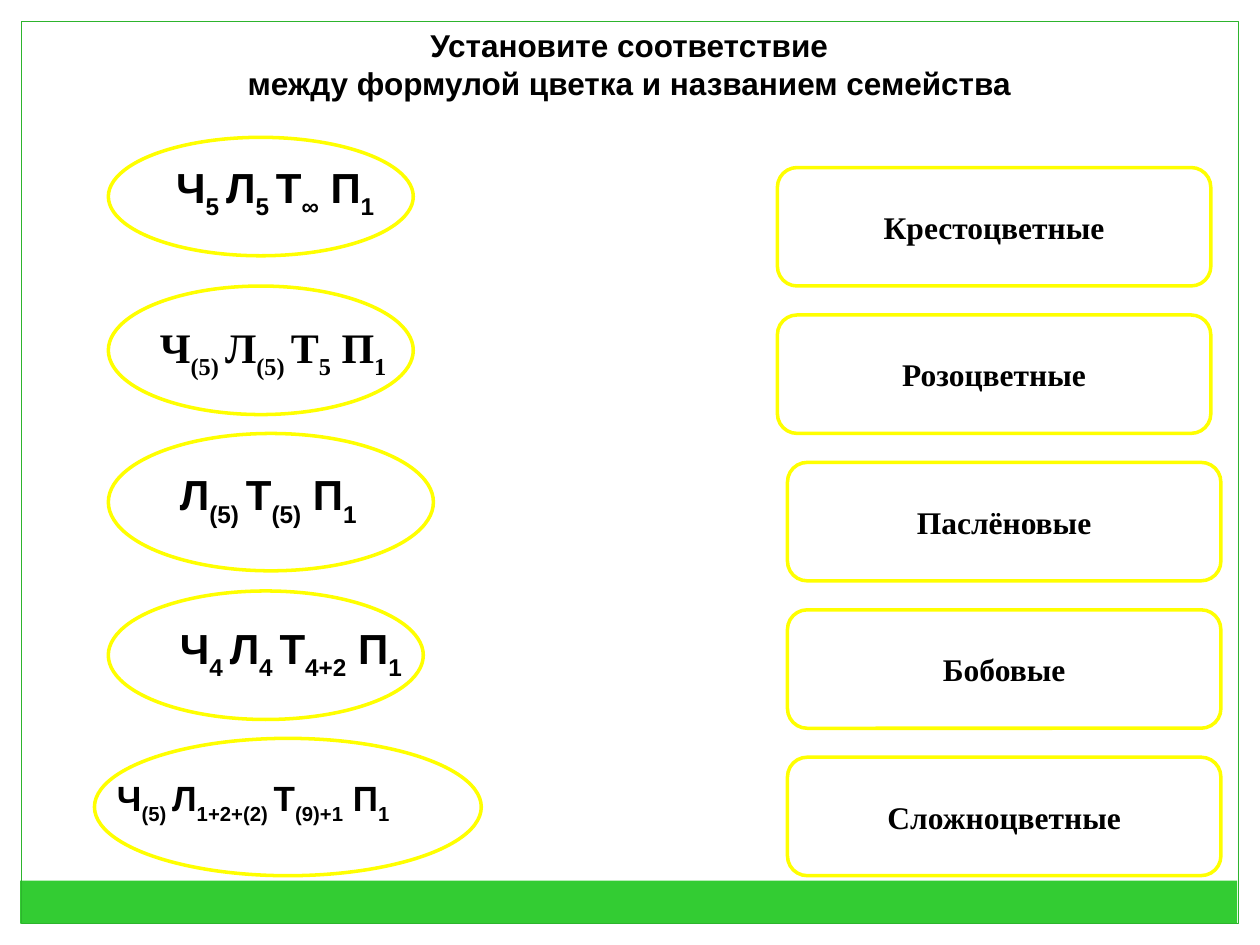
from dataclasses import dataclass

import pptx
import pptx.dml.color
import pptx.enum.shapes
import pptx.enum.text
import pptx.util

Inches = pptx.util.Inches
Kind = pptx.enum.shapes.MSO_SHAPE
Align = pptx.enum.text.PP_ALIGN
Anchor = pptx.enum.text.MSO_ANCHOR


@dataclass(frozen=True)
class Theme:
    paper: str = "FFFFFF"
    ink: str = "000000"
    edge: str = "FFFF00"
    grass: str = "33CC33"
    frame: str = "2DB42D"
    sans: str = "Arial"
    serif: str = "Times New Roman"
    head: int = 18
    large: int = 24
    small: int = 20
    thin: float = 0.75
    thick: float = 2


THEME = Theme()


@dataclass(frozen=True)
class Box:
    left: float
    top: float
    width: float
    height: float

    def lengths(self) -> list:
        return [Inches(n) for n in (self.left, self.top, self.width, self.height)]


@dataclass(frozen=True)
class Flower:
    oval: Box
    label: Box
    signs: str  # base and subscript pieces in turn, split by "|"
    size: int = THEME.large
    face: str = THEME.sans


FLOWERS = [
    Flower(Box(0.86, 1.09, 2.42, 0.94), Box(1.3, 1.23, 1.88, 0.5),
           "Ч|5 |Л|5 |Т|∞| П|1"),
    Flower(Box(0.86, 2.27, 2.42, 1.02), Box(1.17, 2.5, 2.13, 0.5),
           "Ч|(5) |Л|(5) |Т|5| П|1", face=THEME.serif),
    Flower(Box(0.86, 3.44, 2.58, 1.09), Box(1.33, 3.67, 1.76, 0.5),
           "Л|(5) |Т|(5)| П|1"),
    Flower(Box(0.86, 4.69, 2.5, 1.02), Box(1.33, 4.89, 2.03, 0.5),
           "Ч|4 |Л|4 |Т|4+2| П|1"),
    Flower(Box(0.75, 5.86, 3.07, 1.09), Box(0.83, 6.11, 2.66, 0.5),
           "Ч|(5) |Л|1+2+(2) |Т|(9)+1| П|1", size=THEME.small),
]
CLANS = ["Крестоцветные", "Розоцветные", "Паслёновые", "Бобовые", "Сложноцветные"]


def color(code: str) -> pptx.dml.color.RGBColor:
    return pptx.dml.color.RGBColor.from_string(code)


def style(para, size: int, face: str) -> None:
    font = para.font
    font.size = pptx.util.Pt(size)
    font.name = face
    font.bold = True
    font.color.rgb = color(THEME.ink)


def shape(slide, kind, box: Box, fill: str = "", line: str = "",
          width: float = THEME.thick):
    item = slide.shapes.add_shape(kind, *box.lengths())
    item.shadow.inherit = False
    if fill:
        item.fill.solid()
        item.fill.fore_color.rgb = color(fill)
    else:
        item.fill.background()
    if line:
        item.line.color.rgb = color(line)
        item.line.width = pptx.util.Pt(width)
    else:
        item.line.fill.background()
    return item


def title(slide, text: str) -> None:
    head = slide.shapes.title
    head.left, head.top, head.width, head.height = Box(0.23, 0.16, 9.53, 0.71).lengths()
    frame = head.text_frame
    frame.text = text
    frame.word_wrap = True
    frame.auto_size = pptx.enum.text.MSO_AUTO_SIZE.NONE
    frame.vertical_anchor = Anchor.TOP
    for para in frame.paragraphs:
        para.alignment = Align.CENTER
        style(para, THEME.head, THEME.sans)


def card(slide, box: Box, text: str) -> None:
    item = shape(slide, Kind.ROUNDED_RECTANGLE, box, THEME.paper, THEME.edge)
    frame = item.text_frame
    frame.text = text
    frame.vertical_anchor = Anchor.MIDDLE
    para = frame.paragraphs[0]
    para.alignment = Align.CENTER
    style(para, THEME.head, THEME.serif)


def bloom(slide, flower: Flower) -> None:
    shape(slide, Kind.OVAL, flower.oval, THEME.paper, THEME.edge)
    frame = slide.shapes.add_textbox(*flower.label.lengths()).text_frame
    frame.word_wrap = True
    para = frame.paragraphs[0]
    style(para, flower.size, flower.face)
    for index, sign in enumerate(flower.signs.split("|")):
        run = para.add_run()
        run.text = sign
        if index % 2:  # subscript
            run._r.get_or_add_rPr().set("baseline", "-30000")


def main() -> None:
    deck = pptx.Presentation()
    deck.slide_width, deck.slide_height = Inches(10), Inches(7.5)
    slide = deck.slides.add_slide(deck.slide_layouts[5])

    # Green bar and thin frame
    shape(slide, Kind.RECTANGLE, Box(0.16, 6.99, 9.66, 0.34), THEME.grass)
    shape(slide, Kind.RECTANGLE, Box(0.17, 0.17, 9.66, 7.16),
          line=THEME.frame, width=THEME.thin)

    title(slide, "Установите соответствие\nмежду формулой цветка и названием семейства")

    # Family names on the right
    for row, clan in enumerate(CLANS):
        left = 6.17 if row < 2 else 6.25
        card(slide, Box(left, 1.33 + 1.17 * row, 3.44, 0.94), clan)

    # Flower formulas on the left
    for flower in FLOWERS:
        bloom(slide, flower)

    deck.save("out.pptx")


if __name__ == "__main__":
    main()
